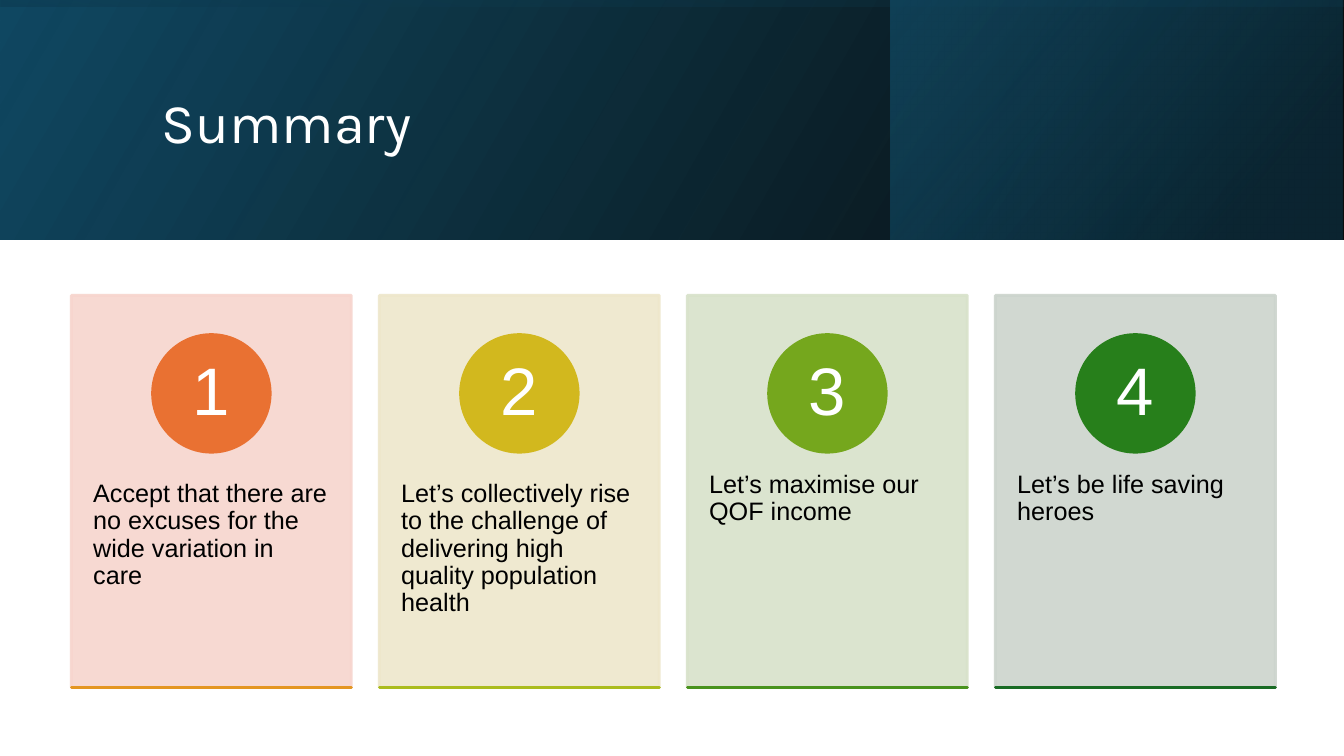
import pptx
import pptx.dml.color
import pptx.enum.shapes
import pptx.enum.text
import pptx.oxml
import pptx.oxml.ns
import pptx.util
from lxml import etree

Pt = pptx.util.Pt
qn = pptx.oxml.ns.qn
SHAPE = pptx.enum.shapes.MSO_SHAPE
ANCHOR = pptx.enum.text.MSO_ANCHOR
ALIGN = pptx.enum.text.PP_ALIGN

COLORS = {
    "white": "FFFFFF", "black": "000000",
    "navy": "104862", "deep": "0B3041", "teal": "156082",
}
# Per card: panel, circle and base line colours, then the message
CARDS = [
    ("F7D5CE", "E97132", "E49622",
     "Accept that there are no excuses for the wide variation in care"),
    ("EEE7CB", "D2B81E", "ABBC1E",
     "Let’s collectively rise to the challenge of delivering high quality population health"),
    ("D8E2CA", "75A71D", "49931D", "Let’s maximise our QOF income"),
    ("CCD4CD", "277F1B", "196B24", "Let’s be life saving heroes"),
]
SLIDE_WIDTH, SLIDE_HEIGHT = 960, 540
BAND_HEIGHT = 171
CARD_LEFT, CARD_TOP, CARD_WIDTH, CARD_HEIGHT = 51, 211, 200, 280
CARD_PITCH = 220
CIRCLE, NUMBER_BOX = 84, 59


class SlideBuilder:
    def __init__(self, slide):
        self.slide = slide

    def add_shape(self, kind, left, top, width, height):
        shape = self.slide.shapes.add_shape(
            kind, Pt(left), Pt(top), Pt(width), Pt(height))
        shape.shadow.inherit = False
        return shape

    def solid(self, kind, box, color, opacity=100):
        """Shape whose fill and 2 pt outline share a colour and opacity."""
        shape = self.add_shape(kind, *box)
        shape.fill.solid()
        shape.line.width = Pt(2)
        for fill in (shape.fill, shape.line.fill):
            fill.solid()
            fill.fore_color.rgb = pptx.dml.color.RGBColor.from_string(color)
        if opacity < 100:
            for node in shape._element.spPr.iter(qn("a:srgbClr")):
                etree.SubElement(node, qn("a:alpha"), val=str(opacity * 1000))

    def gradient(self, box, stops, angle, rotation=0):
        """Mirrored rectangle; stops are (position, colour, opacity) in percent."""
        shape = self.add_shape(SHAPE.RECTANGLE, *box)
        shape.rotation = rotation
        shape.line.fill.background()
        properties = shape._element.spPr
        properties.find(qn("a:xfrm")).set("flipH", "1")
        gradient = etree.Element(qn("a:gradFill"), rotWithShape="1")
        stop_list = etree.SubElement(gradient, qn("a:gsLst"))
        for position, color, opacity in stops:
            stop = etree.SubElement(stop_list, qn("a:gs"), pos=str(position * 1000))
            node = etree.SubElement(stop, qn("a:srgbClr"), val=COLORS[color])
            etree.SubElement(node, qn("a:alpha"), val=str(opacity * 1000))
        etree.SubElement(gradient, qn("a:lin"), ang=str(angle * 60000), scaled="0")
        properties.find(qn("a:prstGeom")).addnext(gradient)

    def text(self, box, words, size, font="Arial", color="black",
             anchor=ANCHOR.TOP, align=ALIGN.LEFT, insets=(7.2, 3.6)):
        shape = self.slide.shapes.add_textbox(*(Pt(length) for length in box))
        frame = shape.text_frame
        frame.word_wrap = True
        frame.vertical_anchor = anchor
        frame.margin_left = frame.margin_right = Pt(insets[0])
        frame.margin_top = frame.margin_bottom = Pt(insets[1])
        paragraph = frame.paragraphs[0]
        paragraph.alignment = align
        paragraph.line_spacing = 0.9
        run = paragraph.add_run()
        run.text = words
        run.font.size = Pt(size)
        run.font.name = font
        run.font.color.rgb = pptx.dml.color.RGBColor.from_string(COLORS[color])

    def card(self, index, panel, circle, base, message):
        left = CARD_LEFT + index * CARD_PITCH
        center = left + CARD_WIDTH / 2
        circle_top = CARD_TOP + 28
        number_top = circle_top + (CIRCLE - NUMBER_BOX) / 2
        self.solid(SHAPE.RECTANGLE, (left, CARD_TOP, CARD_WIDTH, CARD_HEIGHT), panel, 90)
        self.text((left, 317.5, CARD_WIDTH, 168), message, 18, insets=(15.6, 26))
        self.solid(SHAPE.OVAL, (center - CIRCLE / 2, circle_top, CIRCLE, CIRCLE), circle)
        self.text((center - NUMBER_BOX / 2, number_top, NUMBER_BOX, NUMBER_BOX),
                  str(index + 1), 48, color="white", anchor=ANCHOR.MIDDLE,
                  align=ALIGN.CENTER, insets=(6.5, 0.9))
        self.solid(SHAPE.RECTANGLE,
                   (left, CARD_TOP + CARD_HEIGHT, CARD_WIDTH, 0.01), base)


def main():
    presentation = pptx.Presentation()
    presentation.slide_width = Pt(SLIDE_WIDTH)
    presentation.slide_height = Pt(SLIDE_HEIGHT)
    builder = SlideBuilder(presentation.slides.add_slide(presentation.slide_layouts[6]))

    builder.gradient((0, 0, SLIDE_WIDTH, BAND_HEIGHT),
                     [(0, "black", 96), (100, "navy", 100)], 330)
    builder.gradient((636, 0, 323, BAND_HEIGHT),
                     [(19, "deep", 68), (100, "teal", 48)], 320)
    # Turned on its side, this tall rectangle covers the whole band
    offset = (SLIDE_WIDTH - BAND_HEIGHT) / 2
    builder.gradient((offset, -offset, BAND_HEIGHT, SLIDE_WIDTH),
                     [(23, "navy", 16), (99, "black", 45)], 350, rotation=270)
    builder.text((108.5, 27.5, 765.5, 124), "Summary", 40, font="Karla",
                 color="white", anchor=ANCHOR.MIDDLE)
    for index, card in enumerate(CARDS):
        builder.card(index, *card)

    presentation.save("out.pptx")


if __name__ == "__main__":
    main()
